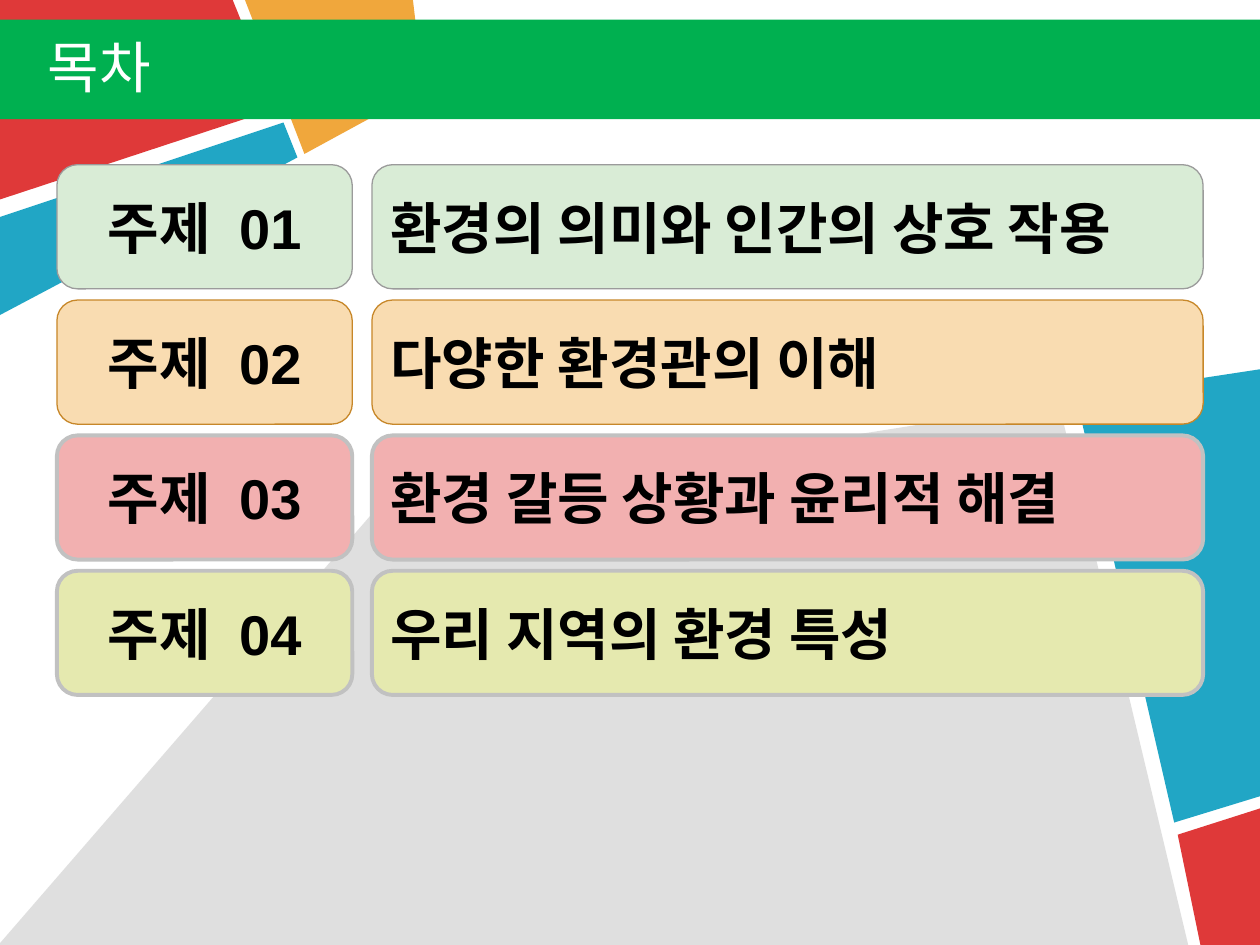
from lxml.etree import SubElement
from pptx import Presentation
from pptx.dml.color import RGBColor
from pptx.enum.shapes import MSO_SHAPE
from pptx.enum.text import MSO_ANCHOR, PP_ALIGN
from pptx.oxml.ns import qn
from pptx.util import Pt

BLACK = RGBColor(0x00, 0x00, 0x00)
WHITE = RGBColor(0xFF, 0xFF, 0xFF)
RED = RGBColor(0xDF, 0x39, 0x39)
BLUE = RGBColor(0x21, 0xA6, 0xC5)
ORANGE = RGBColor(0xF0, 0xA7, 0x3C)
SILVER = RGBColor(0xC1, 0xC1, 0xC1)
GREEN = RGBColor(0x00, 0xB0, 0x50)
MINT = RGBColor(0xD9, 0xEC, 0xD6)
GRAY = RGBColor(0x9B, 0x9B, 0x9B)
PEACH = RGBColor(0xF9, 0xDC, 0xB1)
BROWN = RGBColor(0xC7, 0x87, 0x29)
PINK = RGBColor(0xF2, 0xB0, 0xB0)
LIME = RGBColor(0xE5, 0xE9, 0xAF)

KOREAN_FONT = "Noto Sans CJK KR"
TEXT_SIZE = 32
WORD_GAP = 8.9

SHARDS = [
    (RED, 100, [(720, 462.5), (720, 540), (686.5, 540), (673, 477)]),
    (BLUE, 100, [(615, 227), (720, 210.8), (720, 455), (671, 470.5)]),
    (SILVER, 50, [(0, 539), (214.5, 291.5), (605, 229.5), (679, 540), (0, 540)]),
    (ORANGE, 100, [(139.5, 0), (173.5, 87.8), (242.5, 51), (236.5, 0)]),
    (RED, 100, [(0, 0), (0, 114), (158.5, 62.5), (133, 0)]),
    (BLUE, 100, [(162, 70.5), (169.7, 90), (0, 180.5), (0, 123.5)]),
]

TOPICS = [
    ("01", "환경의 의미와 인간의 상호 작용", MINT, GRAY, 0.75),
    ("02", "다양한 환경관의 이해", PEACH, BROWN, 0.75),
    ("03", "환경 갈등 상황과 윤리적 해결", PINK, SILVER, 2.25),
    ("04", "우리 지역의 환경 특성", LIME, SILVER, 2.25),
]


def add_run(paragraph, text, font_name, color, bold=False, spacing=0):
    run = paragraph.add_run()
    run.text = text
    run.font.size = Pt(TEXT_SIZE)
    run.font.bold = bold
    run.font.color.rgb = color
    run.font.name = font_name
    properties = run.font._element
    SubElement(properties, qn("a:ea")).set("typeface", KOREAN_FONT)
    if spacing:
        properties.set("spc", str(round(spacing * 100)))


def add_background(slide):
    for color, opacity, points in SHARDS:
        builder = slide.shapes.build_freeform(*points[0], scale=Pt(1))
        builder.add_line_segments(points[1:], close=True)
        shape = builder.convert_to_shape()
        shape.shadow.inherit = False
        shape.fill.solid()
        shape.fill.fore_color.rgb = color
        shape.line.fill.background()
        if opacity < 100:
            color_element = shape._element.spPr.find(".//" + qn("a:srgbClr"))
            SubElement(color_element, qn("a:alpha")).set("val", str(opacity * 1000))


def add_title_band(slide, left, top, width, height):
    band = slide.shapes.add_shape(
        MSO_SHAPE.RECTANGLE, Pt(left), Pt(top), Pt(width), Pt(height))
    band.shadow.inherit = False
    band.fill.solid()
    band.fill.fore_color.rgb = GREEN
    band.line.fill.background()
    title = slide.shapes.add_textbox(
        Pt(left + 20.2), Pt(top + 3.8), Pt(79), Pt(46))
    title.text_frame.word_wrap = False
    add_run(title.text_frame.paragraphs[0], "목차", KOREAN_FONT, WHITE)


def add_card(slide, left, top, width, height, fill, line, line_width, alignment):
    card = slide.shapes.add_shape(
        MSO_SHAPE.ROUNDED_RECTANGLE, Pt(left), Pt(top), Pt(width), Pt(height))
    card.shadow.inherit = False
    card.fill.solid()
    card.fill.fore_color.rgb = fill
    card.line.color.rgb = line
    card.line.width = Pt(line_width)
    card.text_frame.word_wrap = True
    card.text_frame.vertical_anchor = MSO_ANCHOR.MIDDLE
    paragraph = card.text_frame.paragraphs[0]
    paragraph.alignment = alignment
    return paragraph


def add_topics(slide, left, top, width, height):
    row_gap, column_gap, label_width = 6.4, 11.2, 168.8
    row_height = (height - row_gap * (len(TOPICS) - 1)) / len(TOPICS)
    subject_left = left + label_width + column_gap
    subject_width = width - label_width - column_gap
    for index, (number, subject, *style) in enumerate(TOPICS):
        row_top = top + index * (row_height + row_gap)
        label = add_card(slide, left, row_top, label_width, row_height,
                         *style, PP_ALIGN.CENTER)
        add_run(label, "주제", "Arial", BLACK, True)
        add_run(label, " ", "Arial", BLACK, True, WORD_GAP)
        add_run(label, number, "Arial", BLACK, True)
        text = add_card(slide, subject_left, row_top, subject_width, row_height,
                        *style, PP_ALIGN.LEFT)
        add_run(text, subject, "Arial", BLACK, True)


def main():
    presentation = Presentation()
    presentation.slide_width = Pt(720)
    presentation.slide_height = Pt(540)
    slide = presentation.slides.add_slide(presentation.slide_layouts[6])
    add_background(slide)
    add_title_band(slide, 0, 11.3, 720, 56.8)
    add_topics(slide, 32.5, 94.1, 655, 303)
    presentation.save("out.pptx")


if __name__ == "__main__":
    main()
